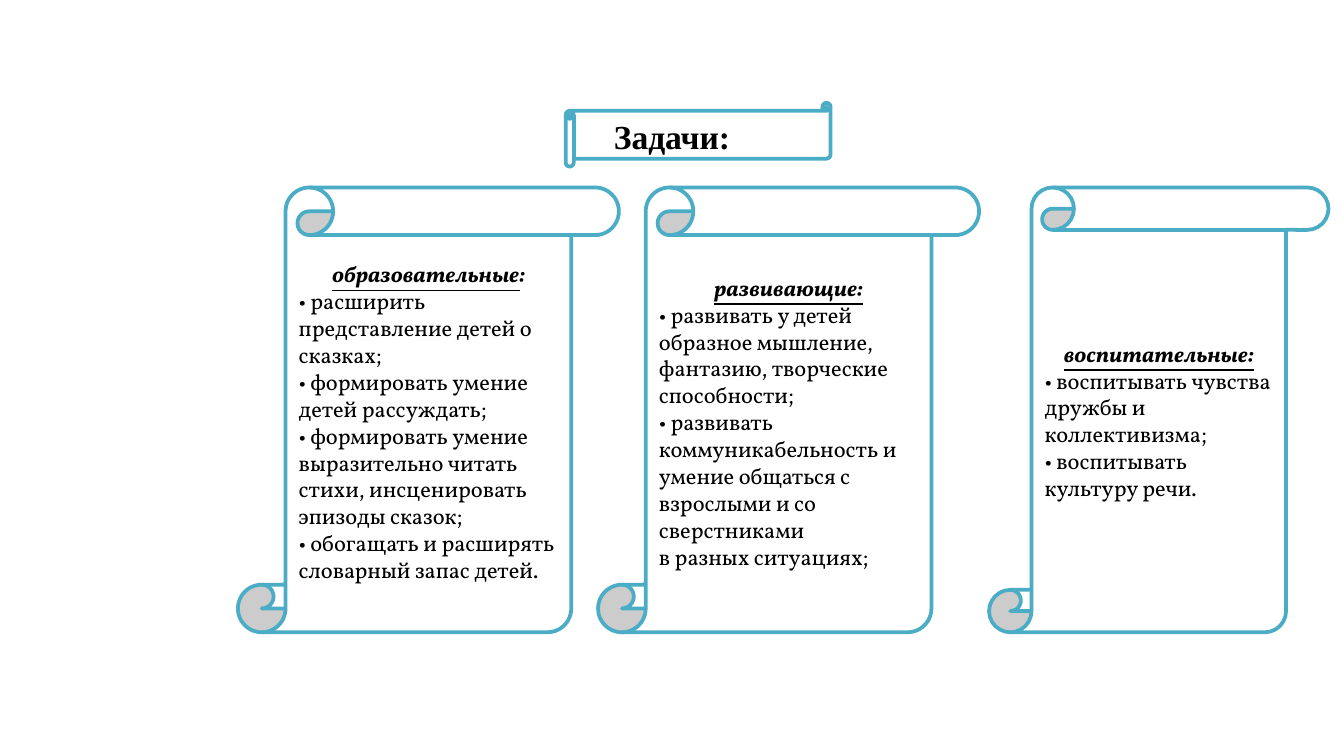
import pptx
import pptx.dml.color
import pptx.enum.shapes
import pptx.enum.text
import pptx.util

PX = 4572  # EMU per px, at 200 px to the inch
SLIDE_SIZE = (2000, 1125)
WHITE = pptx.dml.color.RGBColor(0xFF, 0xFF, 0xFF)
BLACK = pptx.dml.color.RGBColor(0x00, 0x00, 0x00)
TEAL = pptx.dml.color.RGBColor(0x4B, 0xAC, 0xC6)

SHAPES = pptx.enum.shapes.MSO_SHAPE
ALIGN = pptx.enum.text.PP_ALIGN
ANCHOR = pptx.enum.text.MSO_ANCHOR

TITLE_FONT = {"name": "Times New Roman", "size": pptx.util.Pt(18), "bold": True}
TASK_FONT = {"name": "Vollkorn", "size": pptx.util.Pt(12)}
HEADING_FONT = {**TASK_FONT, "bold": True, "italic": True}

SCROLL_TOP, SCROLL_HEIGHT = 279, 662
# left, width, underlined heading, plain end of the heading, lines
TASK_GROUPS = [
    (354, 567, "образовательные", ":", [
        "• расширить представление детей о сказках;",
        "• формировать умение детей рассуждать;",
        "• формировать умение выразительно читать стихи, инсценировать",
        "эпизоды сказок;",
        "• обогащать и расширять словарный запас детей.",
    ]),
    (890, 567, "развивающие:", "", [
        "• развивать у детей образное мышление, фантазию, творческие",
        "способности;",
        "• развивать коммуникабельность и умение общаться с взрослыми и со сверстниками",
        "в разных ситуациях;",
    ]),
    (1472, 505, "воспитательные:", "", [
        "• воспитывать чувства дружбы и коллективизма;",
        "• воспитывать культуру речи.",
    ]),
]


def to_emu(box):
    return [length * PX for length in box]


def add_run(paragraph, text, font_values, underline=False):
    run = paragraph.add_run()
    run.text = text
    for name, value in font_values.items():
        setattr(run.font, name, value)
    run.font.underline = underline
    run.font.color.rgb = BLACK


def add_scroll(slide, preset, box):
    scroll = slide.shapes.add_shape(preset, *to_emu(box))
    scroll.shadow.inherit = False
    scroll.fill.solid()
    scroll.fill.fore_color.rgb = WHITE
    scroll.line.color.rgb = TEAL
    scroll.line.width = pptx.util.Pt(2)
    return scroll


def add_title(slide, box):
    """Draw the banner and put the title placeholder in front of it."""
    left, top, width, height = box
    add_scroll(slide, SHAPES.HORIZONTAL_SCROLL, box)
    title = slide.shapes.title
    slide.shapes.element.append(title.element)
    title_box = (left + 16, top + 1, width - 110, height - 9)
    for name, value in zip(("left", "top", "width", "height"), to_emu(title_box)):
        setattr(title, name, value)
    frame = title.text_frame
    frame.word_wrap = True
    frame.auto_size = pptx.enum.text.MSO_AUTO_SIZE.NONE
    frame.vertical_anchor = ANCHOR.TOP
    paragraph = frame.paragraphs[0]
    paragraph.alignment = ALIGN.CENTER
    paragraph.line_spacing = 1.15
    add_run(paragraph, "Задачи:", TITLE_FONT)


def add_task_group(slide, box, heading, heading_end, lines):
    frame = add_scroll(slide, SHAPES.VERTICAL_SCROLL, box).text_frame
    frame.word_wrap = True
    frame.vertical_anchor = ANCHOR.MIDDLE
    paragraph = frame.paragraphs[0]
    paragraph.alignment = ALIGN.CENTER
    add_run(paragraph, heading, HEADING_FONT, underline=True)
    if heading_end:
        add_run(paragraph, heading_end, HEADING_FONT)
    for line in lines:
        paragraph = frame.add_paragraph()
        paragraph.alignment = ALIGN.LEFT
        add_run(paragraph, line, TASK_FONT)


def main():
    presentation = pptx.Presentation()
    presentation.slide_width, presentation.slide_height = to_emu(SLIDE_SIZE)
    slide = presentation.slides.add_slide(presentation.slide_layouts.get_by_name("Title Only"))
    add_title(slide, (842, 153, 394, 95))
    # The right scroll lies at the back, the left one in front.
    for left, width, heading, heading_end, lines in reversed(TASK_GROUPS):
        box = (left, SCROLL_TOP, width, SCROLL_HEIGHT)
        add_task_group(slide, box, heading, heading_end, lines)
    presentation.save("out.pptx")


if __name__ == "__main__":
    main()
